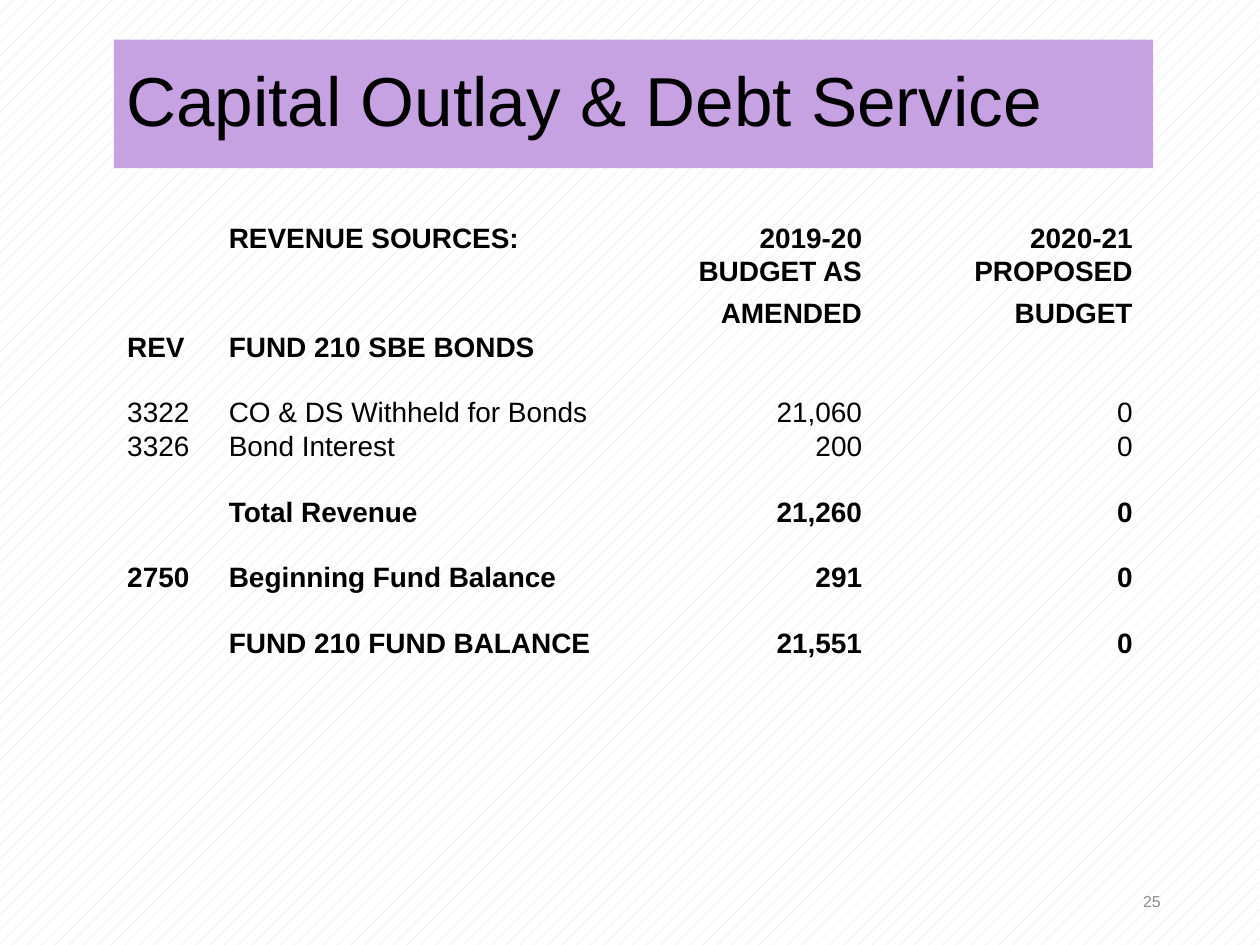
from lxml.etree import SubElement
from pptx import Presentation
from pptx.dml.color import RGBColor
from pptx.enum.dml import MSO_PATTERN
from pptx.enum.shapes import MSO_SHAPE
from pptx.enum.text import MSO_ANCHOR, PP_ALIGN
from pptx.oxml.ns import qn
from pptx.util import Inches, Pt

WIDE, HIGH = Inches(10), Inches(7.5)
COL, ROW = WIDE / 100, HIGH / 75
PLAIN = "{2D5ABB26-0587-4C30-8999-92F81FD0307C}"
WIDTHS = [8.07, 33.75, 16.7, 21.48]
LINE, TALL = 2.55, 3.3
GAP = ("", "", "", "")
ROWS = [
    ("", "REVENUE SOURCES:", "2019-20", "2020-21"),
    ("", "", "BUDGET AS", "PROPOSED"),
    ("", "", "AMENDED", "BUDGET"),
    ("REV", "FUND 210 SBE BONDS", "", ""),
    GAP,
    ("3322", "CO & DS Withheld for Bonds", "21,060", "0"),
    ("3326", "Bond Interest", "200", "0"),
    GAP,
    ("", "Total Revenue", "21,260", "0"),
    GAP,
    ("2750", "Beginning Fund Balance", "291", "0"),
    GAP,
    ("", "FUND 210 FUND BALANCE", "21,551", "0"),
    GAP,
]
LIGHT = (5, 6)


def tint(code):
    """Turn a hex string into a colour."""
    return RGBColor.from_string(code)


def place(x, y, w, h):
    """Turn grid columns and rows into slide lengths."""
    return round(x * COL), round(y * ROW), round(w * COL), round(h * ROW)


def apply(item, form):
    """Set each attribute named in a dict of format values."""
    for name, value in form.items():
        setattr(item, name, value)


def write(para, text, size, code="000000", bold=False, align=PP_ALIGN.LEFT):
    """Write one run of text, or keep an empty paragraph low."""
    para.alignment = align
    if not text:
        SubElement(para._p, qn("a:endParaRPr")).set("sz", "1000")
        return
    run = para.add_run()
    run.text = text
    apply(run.font, {"name": "Arial", "size": Pt(size), "bold": bold})
    run.font.color.rgb = tint(code)


def add_title(slide, box):
    """Draw the title band in its box."""
    band = slide.shapes.add_shape(MSO_SHAPE.RECTANGLE, *place(*box))
    band.shadow.inherit = False
    band.fill.solid()
    band.fill.fore_color.rgb = tint("C7A2E3")
    band.line.fill.background()
    frame = band.text_frame
    apply(frame, {"word_wrap": True, "vertical_anchor": MSO_ANCHOR.MIDDLE})
    para = frame.paragraphs[0]
    para.line_spacing = 0.9
    write(para, "Capital Outlay & Debt Service", 39.6)


def add_funds(slide, box):
    """Lay out the fund table in its box."""
    shape = slide.shapes.add_table(len(ROWS), len(WIDTHS), *place(*box))
    table = shape.table
    apply(table, {"first_row": False, "horz_banding": False})
    table._tbl.tblPr.find(qn("a:tableStyleId")).text = PLAIN
    for col, width in zip(table.columns, WIDTHS):
        col.width = round(width * COL)
    form = {
        "margin_left": Inches(0.01),
        "margin_top": 0,
        "margin_right": Inches(0.01),
        "margin_bottom": 0,
        "vertical_anchor": MSO_ANCHOR.BOTTOM,
    }
    for r, texts in enumerate(ROWS):
        table.rows[r].height = round((TALL if r == 2 else LINE) * ROW)
        for c, text in enumerate(texts):
            cell = table.cell(r, c)
            apply(cell, form)
            cell.fill.background()
            align = PP_ALIGN.RIGHT if c > 1 else PP_ALIGN.LEFT
            para = cell.text_frame.paragraphs[0]
            write(para, text, 16, bold=r not in LIGHT, align=align)


def add_number(slide, box):
    """Put the page number in its box."""
    frame = slide.shapes.add_textbox(*place(*box)).text_frame
    apply(frame, {"word_wrap": True, "vertical_anchor": MSO_ANCHOR.MIDDLE})
    write(frame.paragraphs[0], "25", 9, "8C8C8C", align=PP_ALIGN.RIGHT)


def main():
    """Build the budget slide and save it."""
    deck = Presentation()
    apply(deck, {"slide_width": WIDE, "slide_height": HIGH})
    slide = deck.slides.add_slide(deck.slide_layouts[6])
    fill = slide.background.fill
    fill.patterned()
    fill.pattern = MSO_PATTERN.PERCENT_10
    fill.fore_color.rgb = tint("E3D1F1")
    fill.back_color.rgb = tint("FFFFFF")
    add_title(slide, (9.03, 3.14, 82.5, 10.2))
    add_number(slide, (70.6, 69.5, 22.5, 4))
    add_funds(slide, (10, 17.5, 80, 39))
    deck.save("out.pptx")


if __name__ == "__main__":
    main()
